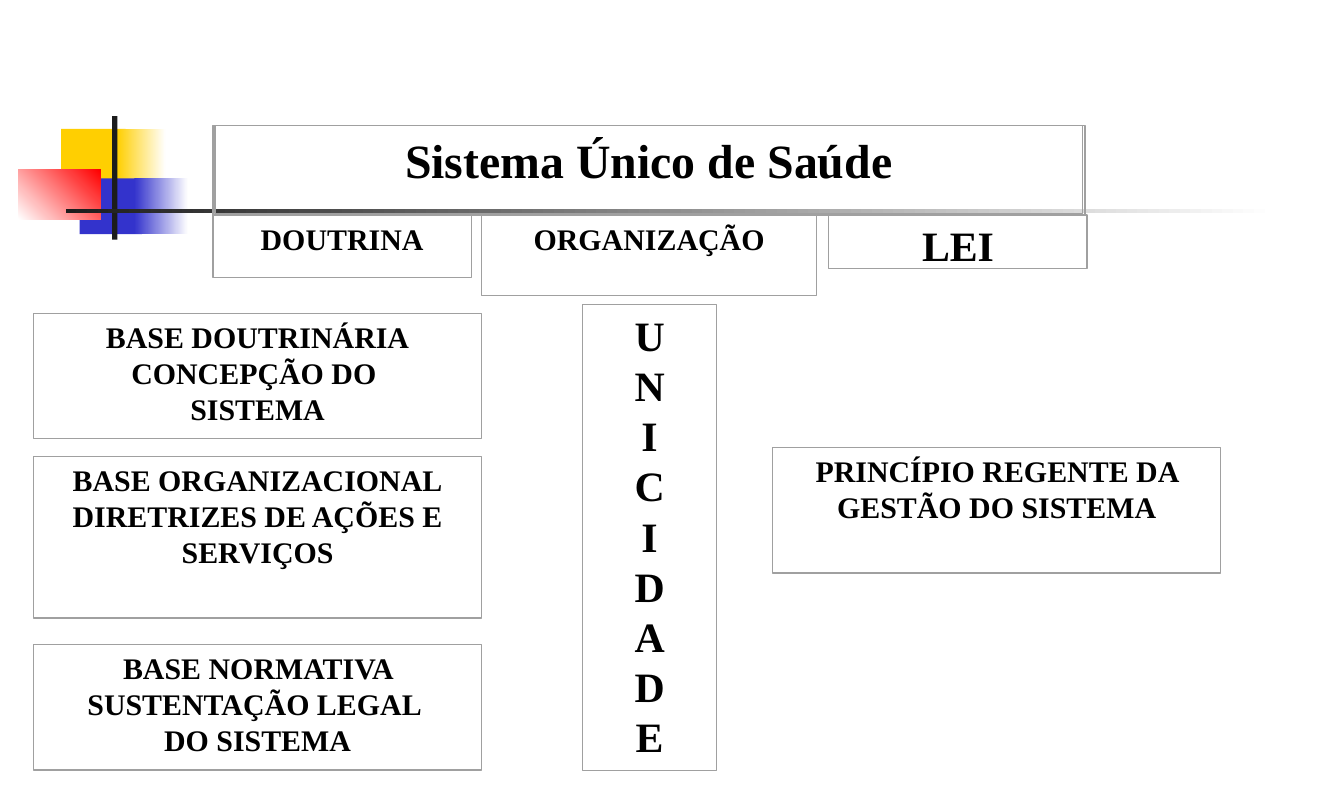
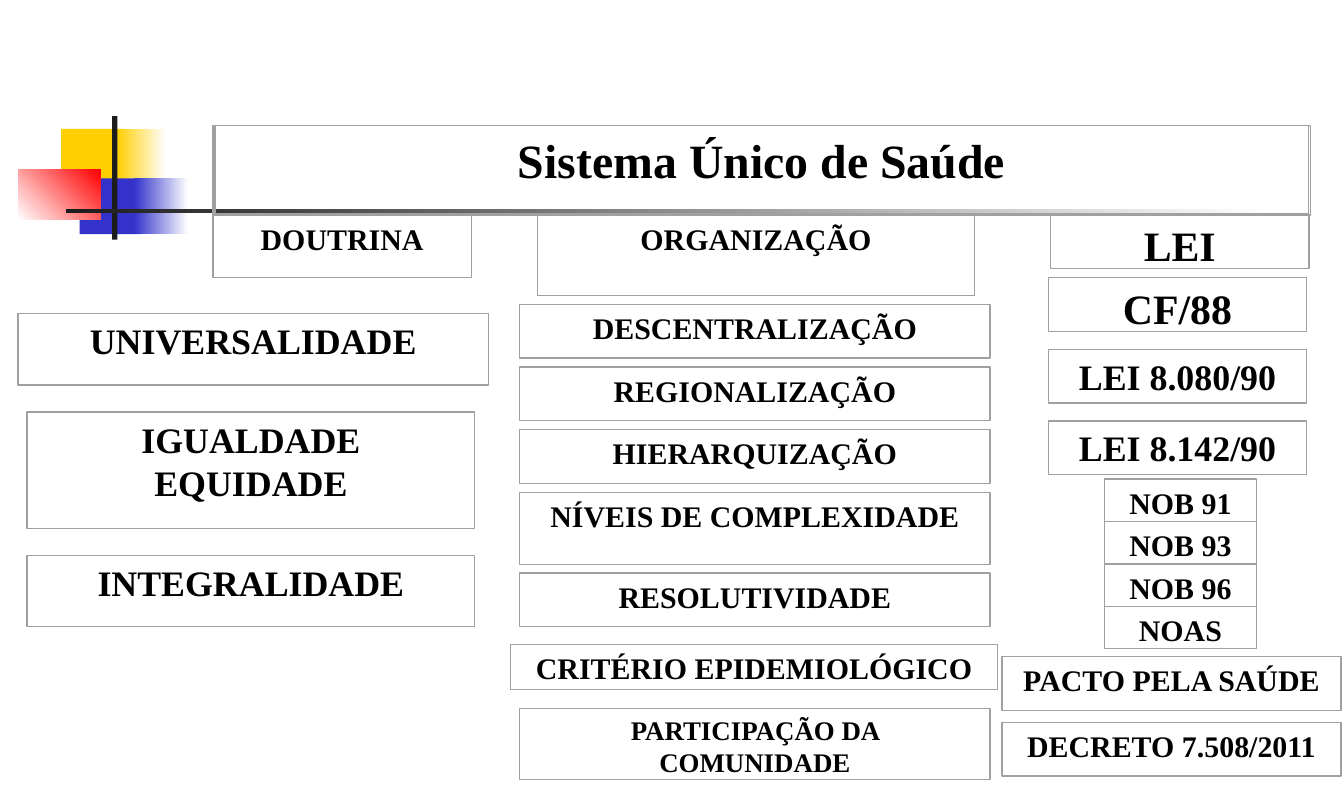
import pptx
import pptx.dml.color
import pptx.enum.shapes
import pptx.enum.text
import pptx.util

Pt = pptx.util.Pt

FONT = "Times New Roman"
COLORS = {
    "yellow": "FFCF01",
    "blue": "3333CC",
    "red": "FF0000",
    "dark": "1C1C1C",
    "white": "FFFFFF",
    "text": "000000",
    "border": "A0A0A0",
}
TITLE = "Sistema Único de Saúde"
TITLE_SIZE = 32

# left, top, width, height, colours (two make a gradient), gradient angle
ORNAMENTS = [
    (41, 86.4, 43.2, 37.4, ["yellow"], 0),
    (78.5, 86.4, 32.4, 37.4, ["yellow", "white"], 0),
    (53.3, 119.5, 41.8, 37.4, ["blue"], 0),
    (90, 119.5, 36, 37.4, ["blue", "white"], 0),
    (12.2, 113.8, 55.4, 33.1, ["white", "red"], 45),
    (75, 77.8, 3.6, 82.8, ["dark"], 0),
    (44, 140.2, 810, 2.4, ["dark", "white"], 0),
]

# Each column: left, width, text size, and its boxes as (top, height, paragraphs)
SLIDES = [
    {
        "title_width": 584,
        "columns": [
            (142.6, 173, 20, [(144, 42, ["DOUTRINA"])]),
            (322.5, 224.5, 20, [(144, 54, ["ORGANIZAÇÃO"])]),
            (555, 173, 28, [(144, 36, ["LEI"])]),
            (22.5, 300, 20, [
                (210, 84, ["BASE DOUTRINÁRIA", "CONCEPÇÃO DO ", "SISTEMA"]),
                (306, 108, ["BASE ORGANIZACIONAL",
                            "DIRETRIZES DE AÇÕES E SERVIÇOS"]),
                (432, 84, ["BASE NORMATIVA SUSTENTAÇÃO LEGAL ", "DO SISTEMA"]),
            ]),
            (390, 90, 28, [(204, 312, list("UNICIDADE"))]),
            (517.5, 300, 20, [
                (300, 84, ["PRINCÍPIO REGENTE DA GESTÃO DO SISTEMA"]),
            ]),
        ],
    },
    {
        "title_width": 735,
        "columns": [
            (142.6, 173, 20, [(144, 42, ["DOUTRINA"])]),
            (360, 292.5, 20, [(144, 54, ["ORGANIZAÇÃO"])]),
            (703.5, 173, 28, [(144, 36, ["LEI"])]),
            (12, 315, 24, [(210, 48, ["UNIVERSALIDADE"])]),
            (18, 300, 24, [
                (276, 78, ["IGUALDADE", "EQUIDADE"]),
                (372, 48, ["INTEGRALIDADE"]),
            ]),
            (348, 315, 20, [
                (204, 36, ["DESCENTRALIZAÇÃO"]),
                (246, 36, ["REGIONALIZAÇÃO"]),
                (288, 36, ["HIERARQUIZAÇÃO"]),
                (330, 48, ["NÍVEIS DE COMPLEXIDADE"]),
                (384, 36, ["RESOLUTIVIDADE"]),
            ]),
            (342, 326, 20, [(432, 30, ["CRITÉRIO EPIDEMIOLÓGICO"])]),
            (348, 315, 18, [(474.5, 48, ["PARTICIPAÇÃO DA COMUNIDADE"])]),
            (702, 173, 28, [(186, 36, ["CF/88"])]),
            (702, 173, 24, [
                (234, 36, ["LEI 8.080/90"]),
                (282, 36, ["LEI 8.142/90"]),
            ]),
            (739.5, 102, 20, [
                (321 + 28.4 * row, 28.4, [rule])
                for row, rule in enumerate(["NOB 91", "NOB 93", "NOB 96", "NOAS"])
            ]),
            (671, 227, 20, [
                (440, 36, ["PACTO PELA SAÚDE"]),
                (484, 36, ["DECRETO 7.508/2011"]),
            ]),
        ],
    },
]


def rgb(name):
    return pptx.dml.color.RGBColor.from_string(COLORS[name])


def add_rectangle(page, left, top, width, height):
    box = page.shapes.add_shape(
        pptx.enum.shapes.MSO_SHAPE.RECTANGLE,
        Pt(left), Pt(top), Pt(width), Pt(height))
    box.shadow.inherit = False
    return box


def outline(box, width=0.87):
    box.fill.background()
    box.line.color.rgb = rgb("border")
    box.line.width = Pt(width)


def write(box, lines, size):
    """Fill an outlined box with bold, centred lines set from its top."""
    outline(box)
    frame = box.text_frame
    frame.text = "\n".join(lines)
    frame.word_wrap = True
    frame.auto_size = pptx.enum.text.MSO_AUTO_SIZE.NONE
    frame.vertical_anchor = pptx.enum.text.MSO_ANCHOR.TOP
    frame.margin_left = frame.margin_right = Pt(12)
    frame.margin_top = frame.margin_bottom = Pt(3.6)
    for para in frame.paragraphs:
        para.alignment = pptx.enum.text.PP_ALIGN.CENTER
        para.line_spacing = Pt(1.2 * size)
        para.space_before = Pt(0)
        para.font.name = FONT
        para.font.size = Pt(size)
        para.font.bold = True
        para.font.color.rgb = rgb("text")


def decorate_master(deck, page):
    """Draw the ornaments on a page, then move them behind the master's text."""
    tree = deck.slide_master.shapes.element
    for index, (left, top, width, height, colors, angle) in enumerate(ORNAMENTS):
        box = add_rectangle(page, left, top, width, height)
        box.line.fill.background()
        if len(colors) == 1:
            box.fill.solid()
            box.fill.fore_color.rgb = rgb(colors[0])
        else:
            box.fill.gradient()
            box.fill.gradient_angle = angle
            for stop, color in zip(box.fill.gradient_stops, colors):
                stop.color.rgb = rgb(color)
        tree.insert(2 + index, box.element)


def add_title(page, width):
    title = page.shapes.title
    title.left, title.top = Pt(142.6), Pt(84)
    title.width, title.height = Pt(width), Pt(60)
    write(title, [TITLE], TITLE_SIZE)
    outline(add_rectangle(page, 144, 84, width - 2.8, 59), 0)


def main():
    deck = pptx.Presentation()
    deck.slide_width, deck.slide_height = Pt(900), Pt(540)
    for number, content in enumerate(SLIDES):
        page = deck.slides.add_slide(deck.slide_layouts[5])
        if number == 0:
            decorate_master(deck, page)
        add_title(page, content["title_width"])
        for left, width, size, boxes in content["columns"]:
            for top, height, lines in boxes:
                write(add_rectangle(page, left, top, width, height), lines, size)
    deck.save("out.pptx")


if __name__ == "__main__":
    main()
